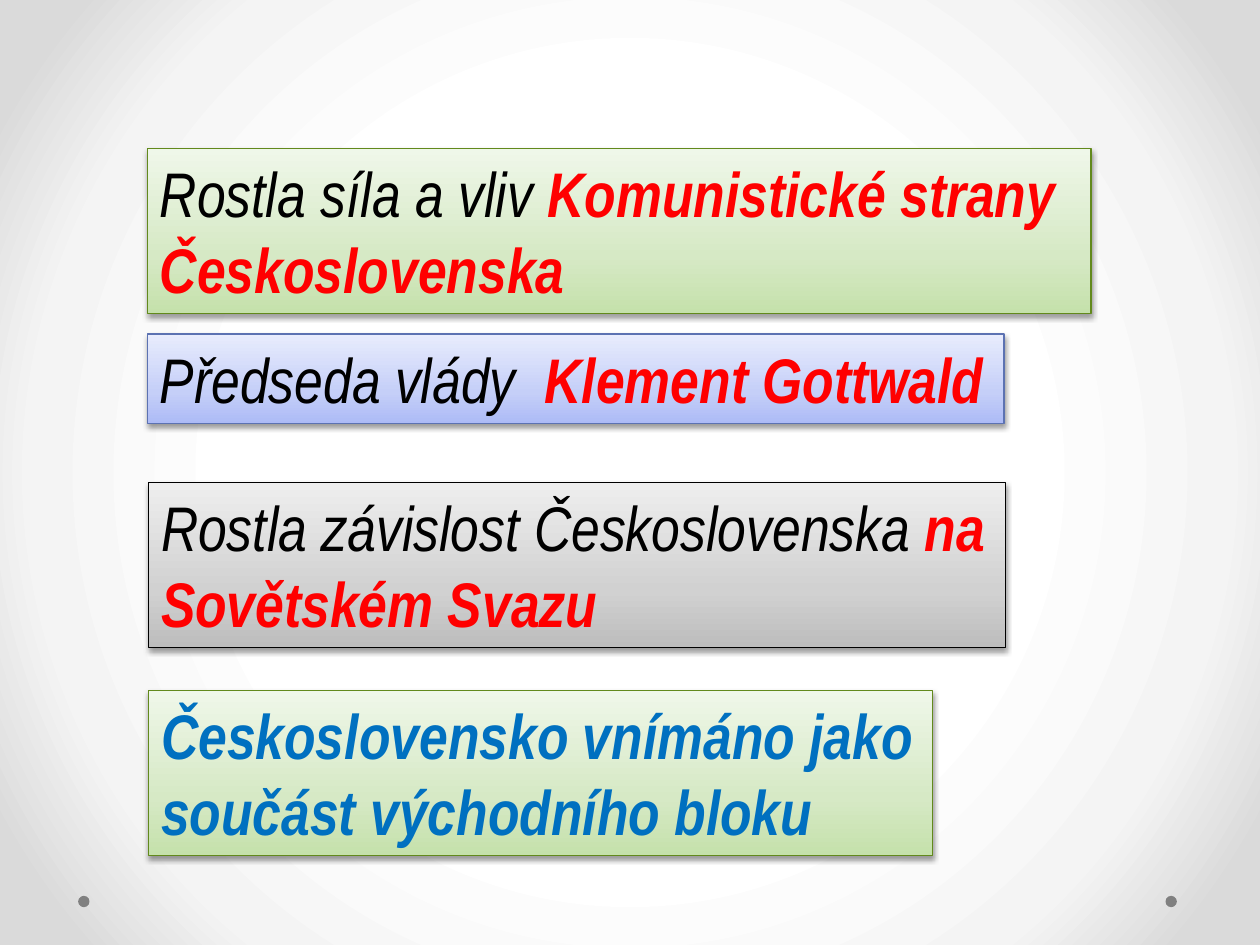
from lxml import etree
from pptx import Presentation
from pptx.dml.color import RGBColor
from pptx.enum import shapes, text
from pptx.oxml.ns import qn
from pptx.util import Inches, Pt

BLACK = RGBColor(0x00, 0x00, 0x00)
RED = RGBColor(0xFF, 0x00, 0x00)
BLUE = RGBColor(0x00, 0x70, 0xC0)
DOT_GRAY = RGBColor(0x80, 0x80, 0x80)
GREEN_LINE = RGBColor(0x62, 0x89, 0x1C)
VIOLET_LINE = RGBColor(0x5C, 0x72, 0xB2)
WHITE = RGBColor(0xFF, 0xFF, 0xFF)
PALE_GRAY = RGBColor(0xF4, 0xF4, 0xF4)
EDGE_GRAY = RGBColor(0xDA, 0xDA, 0xDA)
GREEN_FILL = [(0, RGBColor(0xC5, 0xE1, 0xAB)), (35, RGBColor(0xD6, 0xE9, 0xC5)),
              (100, RGBColor(0xEF, 0xF7, 0xE9))]
VIOLET_FILL = [(0, RGBColor(0xAD, 0xBB, 0xF6)), (35, RGBColor(0xC5, 0xCF, 0xF8)),
               (100, RGBColor(0xE8, 0xEC, 0xFD))]
GRAY_FILL = [(0, RGBColor(0xBD, 0xBD, 0xBD)), (35, RGBColor(0xD1, 0xD1, 0xD1)),
             (100, RGBColor(0xEE, 0xEE, 0xEE))]
BACKGROUND_FILL = [(50, WHITE), (76, PALE_GRAY), (92, EDGE_GRAY)]


def add_element(parent, tag, **attributes):
    return etree.SubElement(parent, qn(tag), {k: str(v) for k, v in attributes.items()})


def set_gradient(fill, owner, stops, radial=False):
    """Fill owner from bottom to top, or from the centre outwards."""
    fill.gradient()
    gradient = owner.find(qn("a:gradFill"))
    for child in list(gradient):
        gradient.remove(child)
    stop_list = add_element(gradient, "a:gsLst")
    for position, color in stops:
        stop = add_element(stop_list, "a:gs", pos=position * 1000)
        add_element(stop, "a:srgbClr", val=color)
    if radial:
        circle = add_element(gradient, "a:path", path="circle")
        add_element(circle, "a:fillToRect", l=50000, t=50000, r=50000, b=50000)
    else:
        add_element(gradient, "a:lin", ang=270 * 60000, scaled=0)


def add_shadow(shape):
    shape.shadow.inherit = False
    effects = shape.element.spPr.find(qn("a:effectLst"))
    shadow = add_element(effects, "a:outerShdw", blurRad=Pt(3.1), dist=Pt(1.6),
                         dir=90 * 60000, rotWithShape=0)
    color = add_element(shadow, "a:srgbClr", val=BLACK)
    add_element(color, "a:alpha", val=38000)


def add_run(paragraph, content, color=BLACK, bold=False, size=36):
    run = paragraph.add_run()
    run.text = content
    font = run.font
    font.name, font.size = "Arial Narrow", Pt(size)
    font.bold, font.italic = bold, True
    font.color.rgb = color


def add_statement(slide, box, fill, line, paragraphs):
    """Place a framed statement; each paragraph is a list of (text, format) runs."""
    shape = slide.shapes.add_shape(shapes.MSO_SHAPE.RECTANGLE, *map(Inches, box))
    set_gradient(shape.fill, shape.element.spPr, fill)
    shape.line.color.rgb = line
    shape.line.width = Pt(0.75)
    add_shadow(shape)
    frame = shape.text_frame
    frame.word_wrap = True
    frame.vertical_anchor = text.MSO_ANCHOR.TOP
    for index, runs in enumerate(paragraphs):
        paragraph = frame.add_paragraph() if index else frame.paragraphs[0]
        paragraph.alignment = text.PP_ALIGN.LEFT
        for content, style in runs:
            add_run(paragraph, content, **style)


def add_dot(slide, left, top, diameter=0.09):
    dot = slide.shapes.add_shape(shapes.MSO_SHAPE.OVAL, Inches(left), Inches(top),
                                 Inches(diameter), Inches(diameter))
    dot.fill.solid()
    dot.fill.fore_color.rgb = DOT_GRAY
    dot.line.fill.background()
    dot.shadow.inherit = False


def add_background(slide):
    fill = slide.background.fill
    owner = slide.element.find(".//" + qn("p:bgPr"))
    set_gradient(fill, owner, BACKGROUND_FILL, radial=True)
    for left in (9.25, 0.62):
        add_dot(slide, left, 7.11)


def main():
    presentation = Presentation()
    presentation.slide_width, presentation.slide_height = Inches(10), Inches(7.5)
    slide = presentation.slides.add_slide(presentation.slide_layouts[6])
    add_background(slide)

    plain = {}
    key = {"color": RED, "bold": True}
    conclusion = {"color": BLUE, "bold": True}
    statements = [
        ((1.17, 1.18, 7.49, 1.31), GREEN_FILL, GREEN_LINE,
         [[("Rostla síla a vliv ", plain), ("Komunistické strany", key)],
          [("Československa", key)]]),
        ((1.17, 2.65, 6.8, 0.71), VIOLET_FILL, VIOLET_LINE,
         [[("Předseda vlády  ", plain), ("Klement Gottwald", key)]]),
        ((1.18, 3.83, 6.8, 1.31), GRAY_FILL, BLACK,
         [[("Rostla závislost Československa ", plain), ("na", key)],
          [("Sovětském Svazu", key)]]),
        ((1.18, 5.48, 6.22, 1.31), GREEN_FILL, GREEN_LINE,
         [[("Československo vnímáno jako", conclusion)],
          [("součást východního bloku", conclusion)]]),
    ]
    for statement in statements:
        add_statement(slide, *statement)
    presentation.save("out.pptx")


if __name__ == "__main__":
    main()
